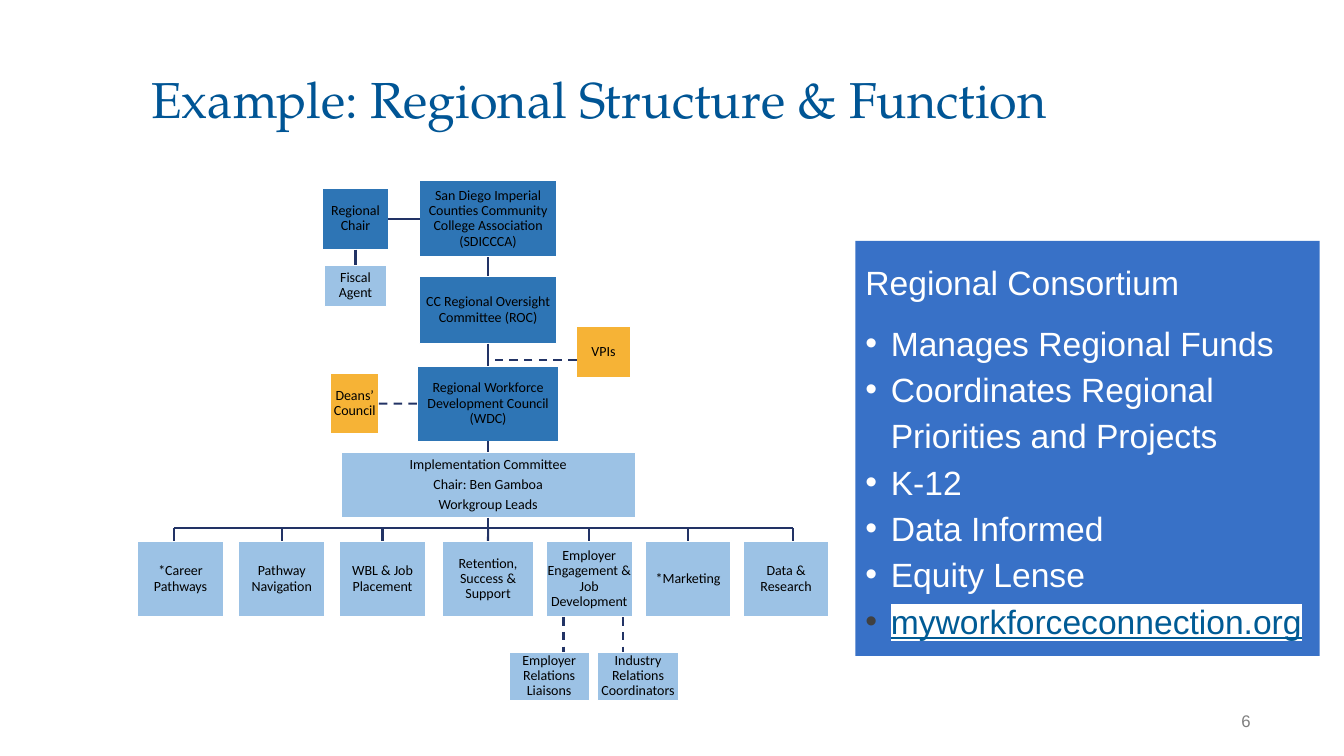
from collections import namedtuple

from lxml import etree
from pptx import Presentation
from pptx.dml.color import RGBColor
from pptx.enum.dml import MSO_LINE
from pptx.enum.shapes import MSO_CONNECTOR, MSO_SHAPE
from pptx.enum.text import MSO_ANCHOR, MSO_AUTO_SIZE, PP_ALIGN
from pptx.oxml.ns import qn
from pptx.util import Cm, Pt

RECTANGLE = MSO_SHAPE.RECTANGLE
STRAIGHT = MSO_CONNECTOR.STRAIGHT
DASH = MSO_LINE.DASH
LEFT, CENTER, RIGHT = PP_ALIGN.LEFT, PP_ALIGN.CENTER, PP_ALIGN.RIGHT
MIDDLE, BOTTOM = MSO_ANCHOR.MIDDLE, MSO_ANCHOR.BOTTOM
NO_AUTO_SIZE = MSO_AUTO_SIZE.NONE
TOP_SIDE, LEFT_SIDE, BOTTOM_SIDE, RIGHT_SIDE = range(4)

DARK_BLUE, LIGHT_BLUE, YELLOW = "2E75B5", "9CC2E5", "F6B336"
WHITE, BLACK, LINE_BLUE = "FFFFFF", "000000", "223365"

Box = namedtuple("Box", "left top width height")


def color(value):
    return RGBColor.from_string(value)


def add_run(paragraph, text, font_name, size, font_color):
    run = paragraph.add_run()
    run.text = text
    run.font.name = font_name
    run.font.size = Pt(size)
    run.font.color.rgb = color(font_color)
    return run


def prepare_frame(frame, anchor, margins):
    frame.word_wrap = True
    frame.auto_size = NO_AUTO_SIZE
    frame.vertical_anchor = anchor
    (frame.margin_left, frame.margin_top,
     frame.margin_right, frame.margin_bottom) = [Cm(margin) for margin in margins]


def add_rectangle(slide, box, fill):
    shape = slide.shapes.add_shape(RECTANGLE, *[Cm(length) for length in box])
    shape.shadow.inherit = False
    shape.fill.solid()
    shape.fill.fore_color.rgb = color(fill)
    return shape


def add_bullet(paragraph, bullet_color):
    properties = paragraph._p.get_or_add_pPr()
    properties.set("marL", str(Cm(0.64)))
    properties.set("indent", str(-Cm(0.64)))
    fill = etree.SubElement(properties, qn("a:buClr"))
    etree.SubElement(fill, qn("a:srgbClr"), val=bullet_color)
    etree.SubElement(properties, qn("a:buFont"), typeface="Arial")
    etree.SubElement(properties, qn("a:buChar"), char="•")


def highlight(run, value):
    element = etree.Element(qn("a:highlight"))
    etree.SubElement(element, qn("a:srgbClr"), val=value)
    run._r.get_or_add_rPr().find(qn("a:solidFill")).addnext(element)


def add_line(slide, start=(0, 0), end=(0, 0), dashed=False):
    connector = slide.shapes.add_connector(
        STRAIGHT, *[Cm(length) for length in (*start, *end)])
    connector.line.color.rgb = color(LINE_BLUE)
    connector.line.width = Pt(1.5)
    if dashed:
        connector.line.dash_style = DASH
    etree.SubElement(connector._element.spPr, qn("a:effectLst"))
    return connector


def join(slide, first, first_side, second, second_side, dashed=False):
    connector = add_line(slide, dashed=dashed)
    connector.begin_connect(first, first_side)
    connector.end_connect(second, second_side)


def draw_title(slide, box):
    title = slide.shapes.title
    title.left, title.top, title.width, title.height = [Cm(length) for length in box]
    prepare_frame(title.text_frame, BOTTOM, (0.25, 0.13, 0.25, 0.13))
    paragraph = title.text_frame.paragraphs[0]
    paragraph.alignment = LEFT
    paragraph.line_spacing = 0.9
    add_run(paragraph, "Example: Regional Structure & Function",
            "TeX Gyre Pagella", 36, "005595")


def draw_consortium(slide, box):
    panel = add_rectangle(slide, box, "3871C7")
    panel.line.fill.background()
    frame = panel.text_frame
    prepare_frame(frame, MIDDLE, (0.25, 0.13, 0.25, 0.13))
    heading = frame.paragraphs[0]
    heading.alignment = LEFT
    heading.line_spacing = 1.15
    add_run(heading, "Regional Consortium", "Arial", 24, WHITE)
    website = "myworkforceconnection.org"
    functions = ["Manages Regional Funds", "Coordinates Regional Priorities and Projects",
                 "K-12", "Data Informed", "Equity Lense", website]
    for index, text in enumerate(functions):
        paragraph = frame.add_paragraph()
        add_bullet(paragraph, "404040" if text == website else WHITE)
        paragraph.alignment = LEFT
        paragraph.line_spacing = 1.15
        paragraph.space_before = Pt(0 if index else 10)
        run = add_run(paragraph, text, "Arial", 24,
                      "005B95" if text == website else WHITE)
        if text == website:
            run.font.underline = True
            highlight(run, WHITE)


def draw_unit(slide, chart, center, top, width, height, fill, *lines):
    unit = add_rectangle(
        slide, Box(chart.left + center - width / 2, chart.top + top, width, height), fill)
    unit.line.color.rgb = color(WHITE)
    unit.line.width = Pt(1)
    frame = unit.text_frame
    prepare_frame(frame, MIDDLE, (0.03,) * 4)
    for index, text in enumerate(lines):
        paragraph = frame.add_paragraph() if index else frame.paragraphs[0]
        paragraph.alignment = CENTER
        paragraph.line_spacing = 0.9
        if index:
            paragraph.space_before = Pt(3.5)
        add_run(paragraph, text, "Calibri", 10, BLACK)
    return unit


def draw_governance(slide, chart, spine):
    association = draw_unit(
        slide, chart, spine, 0.05, 3.45, 1.93, DARK_BLUE,
        "San Diego Imperial Counties Community College Association (SDICCCA)")
    oversight = draw_unit(slide, chart, spine, 2.46, 3.45, 1.7, DARK_BLUE,
                          "CC Regional Oversight Committee (ROC)")
    council = draw_unit(slide, chart, spine, 4.72, 3.56, 1.9, DARK_BLUE,
                        "Regional Workforce Development Council (WDC)")
    committee = draw_unit(slide, chart, spine, 6.9, 7.42, 1.65, LIGHT_BLUE,
                          "Implementation Committee", "Chair: Ben Gamboa", "Workgroup Leads")
    chair = draw_unit(slide, chart, 5.5, 0.24, 1.65, 1.55, DARK_BLUE, "Regional Chair")
    agent = draw_unit(slide, chart, 5.5, 2.18, 1.57, 1.04, LIGHT_BLUE, "Fiscal Agent")
    deans = draw_unit(slide, chart, 5.48, 4.9, 1.22, 1.54, YELLOW, "Deans’ Council")
    draw_unit(slide, chart, 11.75, 3.73, 1.35, 1.3, YELLOW, "VPIs")

    levels = [association, oversight, council, committee]
    for upper, lower in zip(levels, levels[1:]):
        join(slide, upper, BOTTOM_SIDE, lower, TOP_SIDE)
    join(slide, chair, RIGHT_SIDE, association, LEFT_SIDE)
    join(slide, chair, BOTTOM_SIDE, agent, TOP_SIDE)
    join(slide, deans, RIGHT_SIDE, council, LEFT_SIDE, dashed=True)
    advice = chart.top + 4.57
    add_line(slide, (chart.left + 11.07, advice), (chart.left + spine, advice), dashed=True)
    return committee


def draw_workgroups(slide, chart, spine, committee):
    bus, top, height = chart.top + 8.81, 9.13, 1.92
    bus_start, bus_end = chart.left + 0.93, chart.left + 16.53
    groups = [(1.09, "*Career Pathways"), (3.64, "Pathway Navigation"),
              (6.18, "WBL & Job Placement"), (spine, "Retention, Success & Support"),
              (11.39, "Employer Engagement & Job Development"),
              (13.88, "*Marketing"), (16.35, "Data & Research")]
    add_line(slide, (bus_start, bus), (bus_end, bus))
    trunk = add_line(slide, end=(chart.left + spine, bus))
    trunk.begin_connect(committee, BOTTOM_SIDE)
    for center, name in groups:
        width = 2.3 if center == spine else 2.17
        group = draw_unit(slide, chart, center, top, width, height, LIGHT_BLUE, name)
        if (center, name) in groups[1:-1]:
            drop = add_line(slide, (chart.left + center, bus))
            drop.end_connect(group, TOP_SIDE)
    for bus_tip in (bus_start, bus_end):
        add_line(slide, (bus_tip, bus), (bus_tip, chart.top + top))

    support_top = 11.93
    for center, link, name in [(10.38, 10.74, "Employer Relations Liaisons"),
                               (12.62, 12.24, "Industry Relations Coordinators")]:
        draw_unit(slide, chart, center, support_top, 2.03, 1.22, LIGHT_BLUE, name)
        add_line(slide, (chart.left + link, chart.top + top + height),
                 (chart.left + link, chart.top + support_top), dashed=True)


def draw_organization(slide, chart):
    spine = 8.84
    committee = draw_governance(slide, chart, spine)
    draw_workgroups(slide, chart, spine, committee)


def draw_page_number(slide, box):
    shape = slide.shapes.add_textbox(*[Cm(length) for length in box])
    prepare_frame(shape.text_frame, MIDDLE, (0.25, 0.13, 0, 0.13))
    paragraph = shape.text_frame.paragraphs[0]
    paragraph.alignment = RIGHT
    add_run(paragraph, "6", "Arial", 12, "7F7F7F")


def main():
    presentation = Presentation()
    presentation.slide_width = Cm(33.87)
    presentation.slide_height = Cm(19.05)
    slide = presentation.slides.add_slide(presentation.slide_layouts[5])
    draw_title(slide, Box(3.56, 1.02, 27.91, 2.36))
    draw_consortium(slide, Box(21.56, 6.07, 11.7, 10.46))
    draw_organization(slide, Box(3.46, 4.5, 17.44, 13.15))
    draw_page_number(slide, Box(28.98, 17.65, 2.54, 1.02))
    presentation.save("out.pptx")


if __name__ == "__main__":
    main()
